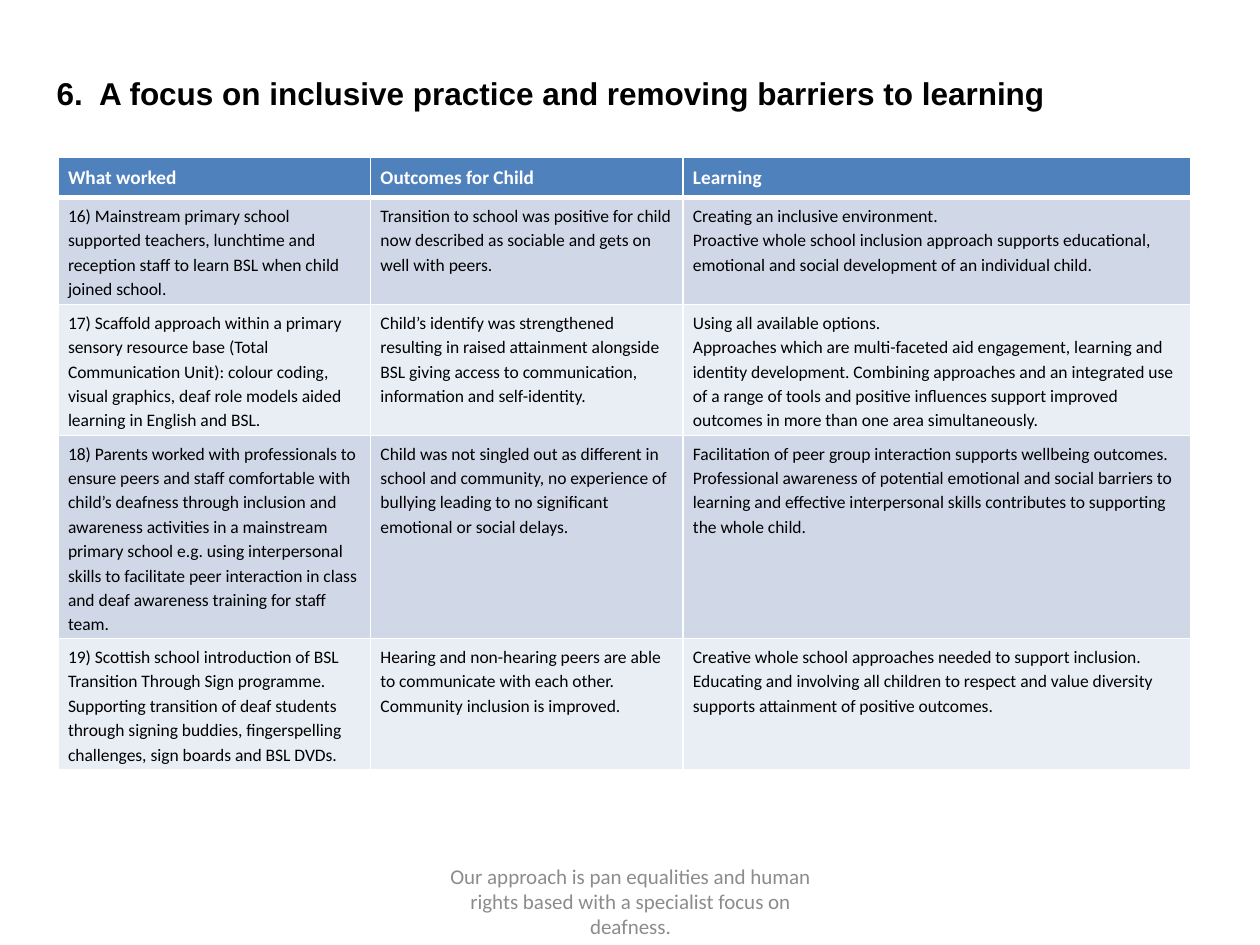
from lxml import etree
from pptx import Presentation
from pptx.dml.color import RGBColor
from pptx.enum.text import MSO_ANCHOR, PP_ALIGN
from pptx.oxml.ns import qn
from pptx.util import Inches, Pt

MIDDLE, TOP = MSO_ANCHOR.MIDDLE, MSO_ANCHOR.TOP
LEFT, CENTER = PP_ALIGN.LEFT, PP_ALIGN.CENTER

BLACK = RGBColor(0x00, 0x00, 0x00)
WHITE = RGBColor(0xFF, 0xFF, 0xFF)
GREY = RGBColor(0x8C, 0x8C, 0x8C)
HEADER_BLUE = RGBColor(0x4F, 0x81, 0xBD)
BANDS = (RGBColor(0xD0, 0xD8, 0xE8), RGBColor(0xE9, 0xED, 0xF4))

TITLE = "6.  A focus on inclusive practice and removing barriers to learning"
FOOTER = ("Our approach is pan equalities and human rights based "
          "with a specialist focus on deafness.")
COL_WIDTHS = (2.48, 2.48, 4.03)
ROW_HEIGHTS = (0.32, 0.64, 1.01, 1.57, 1.01)

# A line break inside a cell starts a new paragraph.
ROWS = (
    ("What worked", "Outcomes for Child", "Learning"),
    ("16) Mainstream primary school supported teachers, lunchtime and "
     "reception staff to learn BSL when child joined school.",
     "Transition to school was positive for child now described as sociable "
     "and gets on well with peers.",
     "Creating an inclusive environment.\n"
     "Proactive whole school inclusion approach supports educational, "
     "emotional and social development of an individual child."),
    ("17) Scaffold approach within a primary sensory resource base (Total "
     "Communication Unit): colour coding, visual graphics, deaf role models "
     "aided learning in English and BSL.",
     "Child’s identify was strengthened resulting in raised attainment "
     "alongside BSL giving access to communication, information and "
     "self-identity.",
     "Using all available options.\n"
     "Approaches which are multi-faceted aid engagement, learning and "
     "identity development. Combining approaches and an integrated use of a "
     "range of tools and positive influences support improved outcomes in "
     "more than one area simultaneously."),
    ("18) Parents worked with professionals to ensure peers and staff "
     "comfortable with child’s deafness through inclusion and awareness "
     "activities in a mainstream primary school e.g. using interpersonal "
     "skills to facilitate peer interaction in class and deaf awareness "
     "training for staff team.",
     "Child was not singled out as different in school and community, no "
     "experience of bullying leading to no significant emotional or social "
     "delays.",
     "Facilitation of peer group interaction supports wellbeing outcomes.  "
     "Professional awareness of potential emotional and social barriers to "
     "learning and effective interpersonal skills contributes to supporting "
     "the whole child."),
    ("19) Scottish school introduction of BSL Transition Through Sign "
     "programme.  Supporting transition of deaf students through signing "
     "buddies, fingerspelling challenges, sign boards and BSL DVDs.",
     "Hearing and non-hearing peers are able to communicate with each "
     "other.  Community inclusion is improved.",
     "Creative whole school approaches needed to support inclusion.  "
     "Educating and involving all children to respect and value diversity "
     "supports attainment of positive outcomes."),
)


def add_run(p, text, size, color, font="Calibri", bold=False):
    r = p.add_run()
    r.text = text
    r.font.name = font
    r.font.size = Pt(size)
    r.font.bold = bold
    r.font.color.rgb = color


def set_borders(cell, top, bottom):
    """Draw white cell borders; top and bottom are widths in points."""
    tc_pr = cell._tc.get_or_add_tcPr()
    for side, width in (("L", 1), ("R", 1), ("T", top), ("B", bottom)):
        ln = etree.SubElement(tc_pr, qn(f"a:ln{side}"), w=str(Pt(width)))
        fill = etree.SubElement(ln, qn("a:solidFill"))
        etree.SubElement(fill, qn("a:srgbClr"), val=str(WHITE))


def fill_cell(cell, text, row):
    header = row == 0
    set_borders(cell, 3 if row == 1 else 1, 3 if header else 1)
    cell.fill.solid()
    cell.fill.fore_color.rgb = HEADER_BLUE if header else BANDS[(row - 1) % 2]
    cell.margin_left = cell.margin_right = Inches(0.08)
    cell.margin_top = cell.margin_bottom = Inches(0.04)
    tf = cell.text_frame
    for i, line in enumerate(text.split("\n")):
        p = tf.add_paragraph() if i else tf.paragraphs[0]
        p.line_spacing = 1.15
        add_run(p, line, 11 if header else 10,
                WHITE if header else BLACK, bold=header)


def add_practice_table(s):
    table = s.shapes.add_table(
        len(ROW_HEIGHTS), len(COL_WIDTHS), Inches(0.46), Inches(1.25),
        Inches(sum(COL_WIDTHS)), Inches(sum(ROW_HEIGHTS))).table
    for col, width in zip(table.columns, COL_WIDTHS):
        col.width = Inches(width)
    for i, (height, texts) in enumerate(zip(ROW_HEIGHTS, ROWS)):
        table.rows[i].height = Inches(height)
        for j, text in enumerate(texts):
            fill_cell(table.cell(i, j), text, i)


def set_title(s):
    sp = s.shapes.title
    sp.left, sp.top = Inches(0.35), Inches(0.46)
    sp.width, sp.height = Inches(8.12), Inches(1.08)
    tf = sp.text_frame
    tf.word_wrap = False
    tf.vertical_anchor = TOP
    tf.margin_top = Inches(0.13)
    p = tf.paragraphs[0]
    p.alignment = LEFT
    add_run(p, TITLE, 18, BLACK, font="Arial", bold=True)


def add_footer(s):
    sp = s.shapes.add_textbox(Inches(3.42), Inches(6.95),
                              Inches(3.17), Inches(0.4))
    tf = sp.text_frame
    tf.word_wrap = True
    tf.vertical_anchor = MIDDLE
    p = tf.paragraphs[0]
    p.alignment = CENTER
    add_run(p, FOOTER, 12, GREY)


def main():
    prs = Presentation()
    prs.slide_width, prs.slide_height = Inches(10), Inches(7.5)
    s = prs.slides.add_slide(prs.slide_layouts[5])
    add_footer(s)
    add_practice_table(s)
    set_title(s)
    prs.save("out.pptx")


if __name__ == "__main__":
    main()
